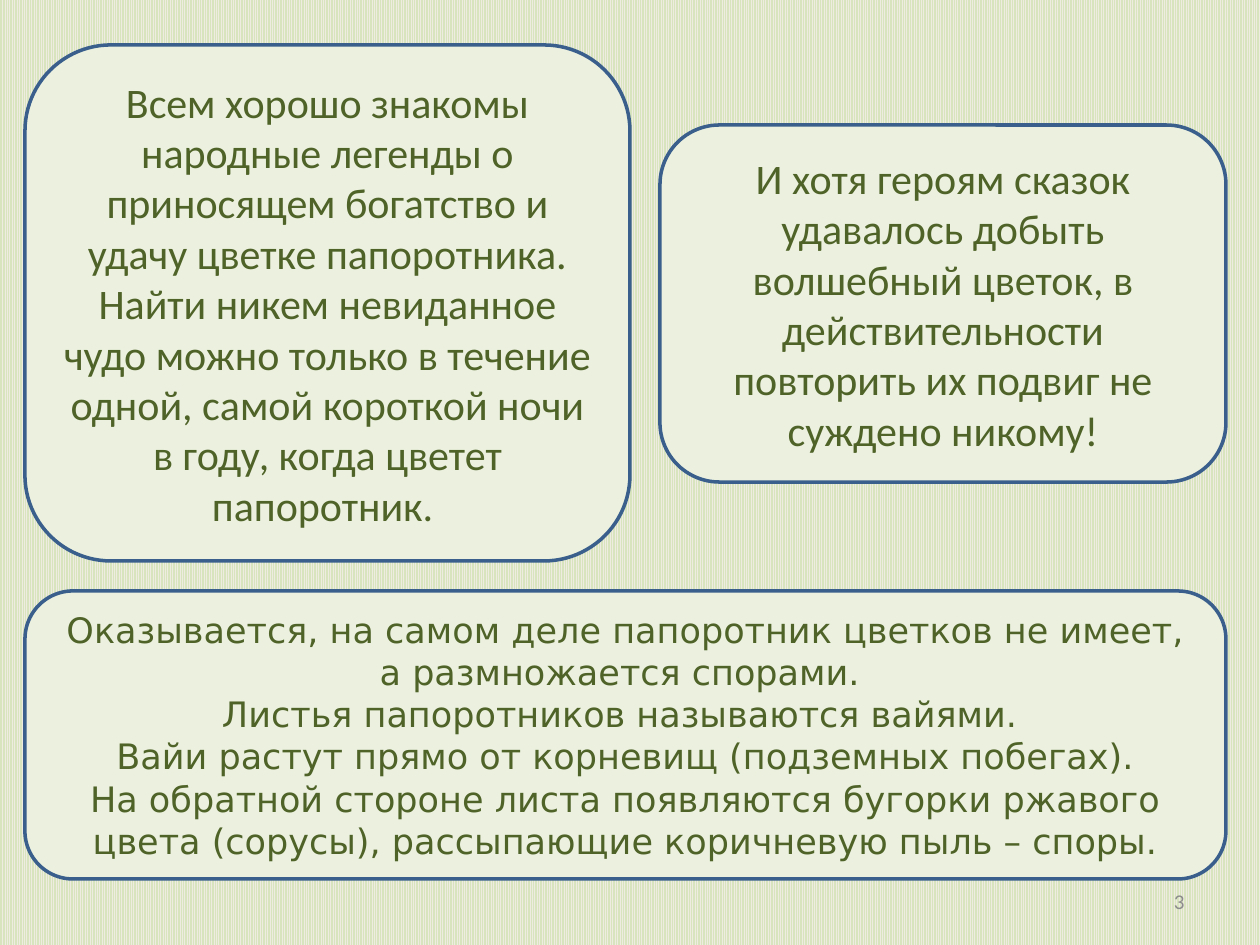
from pptx import Presentation
from pptx.dml.color import RGBColor
from pptx.enum.dml import MSO_PATTERN
from pptx.enum.shapes import MSO_SHAPE
from pptx.enum.text import MSO_ANCHOR, PP_ALIGN
from pptx.util import Emu, Pt

PX = 914400 // 126
ROUNDED = MSO_SHAPE.ROUNDED_RECTANGLE
STRIPES = MSO_PATTERN.LIGHT_VERTICAL
MIDDLE = MSO_ANCHOR.MIDDLE
CENTER = PP_ALIGN.CENTER
RIGHT = PP_ALIGN.RIGHT

COLORS = {
    "stripe": "EEECE1",
    "background": "D7E4BD",
    "panel": "EBF1DE",
    "border": "3A5F8C",
    "text": "4F6228",
    "number": "8C8C8C",
}

LEGEND = [
    "Всем хорошо знакомы народные легенды о приносящем богатство и удачу "
    "цветке папоротника. Найти никем невиданное чудо можно только в течение "
    "одной, самой короткой ночи в году, когда цветет папоротник. "
]
HEROES = [
    "И хотя героям сказок удавалось добыть волшебный цветок, "
    "в действительности повторить их подвиг не суждено никому!"
]
FACTS = [
    "Оказывается, на самом деле папоротник цветков не имеет, "
    "а размножается спорами. ",
    "Листья папоротников называются вайями. ",
    "Вайи растут прямо от корневищ (подземных побегах).",
    "На обратной стороне листа появляются бугорки ржавого цвета (сорусы), "
    "рассыпающие коричневую пыль – споры.",
]


def px(value):
    return Emu(value * PX)


def color(name):
    return RGBColor.from_string(COLORS[name])


def write_text(shape, lines, size=24, font="Calibri", ink="text", align=CENTER):
    frame = shape.text_frame
    frame.word_wrap = True
    frame.vertical_anchor = MIDDLE
    for index, line in enumerate(lines):
        paragraph = frame.add_paragraph() if index else frame.paragraphs[0]
        paragraph.alignment = align
        run = paragraph.add_run()
        run.text = line
        run.font.size = Pt(size)
        run.font.name = font
        run.font.color.rgb = color(ink)


def paint_background(slide):
    fill = slide.background.fill
    fill.patterned()
    fill.pattern = STRIPES
    fill.fore_color.rgb = color("stripe")
    fill.back_color.rgb = color("background")


def add_panel(slide, box, lines, **text_format):
    shape = slide.shapes.add_shape(ROUNDED, *map(px, box))
    shape.shadow.inherit = False
    shape.fill.solid()
    shape.fill.fore_color.rgb = color("panel")
    shape.line.color.rgb = color("border")
    shape.line.width = Pt(2)
    write_text(shape, lines, **text_format)


def add_slide_number(slide, box, number):
    shape = slide.shapes.add_textbox(*map(px, box))
    write_text(shape, [number], size=12, ink="number", align=RIGHT)


def main():
    presentation = Presentation()
    presentation.slide_width = px(1260)
    presentation.slide_height = px(945)
    slide = presentation.slides.add_slide(presentation.slide_layouts[6])
    paint_background(slide)
    add_panel(slide, (25, 45, 605, 516), LEGEND)
    add_panel(slide, (660, 125, 566, 357), HEROES)
    add_panel(slide, (25, 591, 1201, 288), FACTS, size=20, font="DejaVu Sans")
    add_slide_number(slide, (903, 876, 294, 50), "3")
    presentation.save("out.pptx")


if __name__ == "__main__":
    main()
